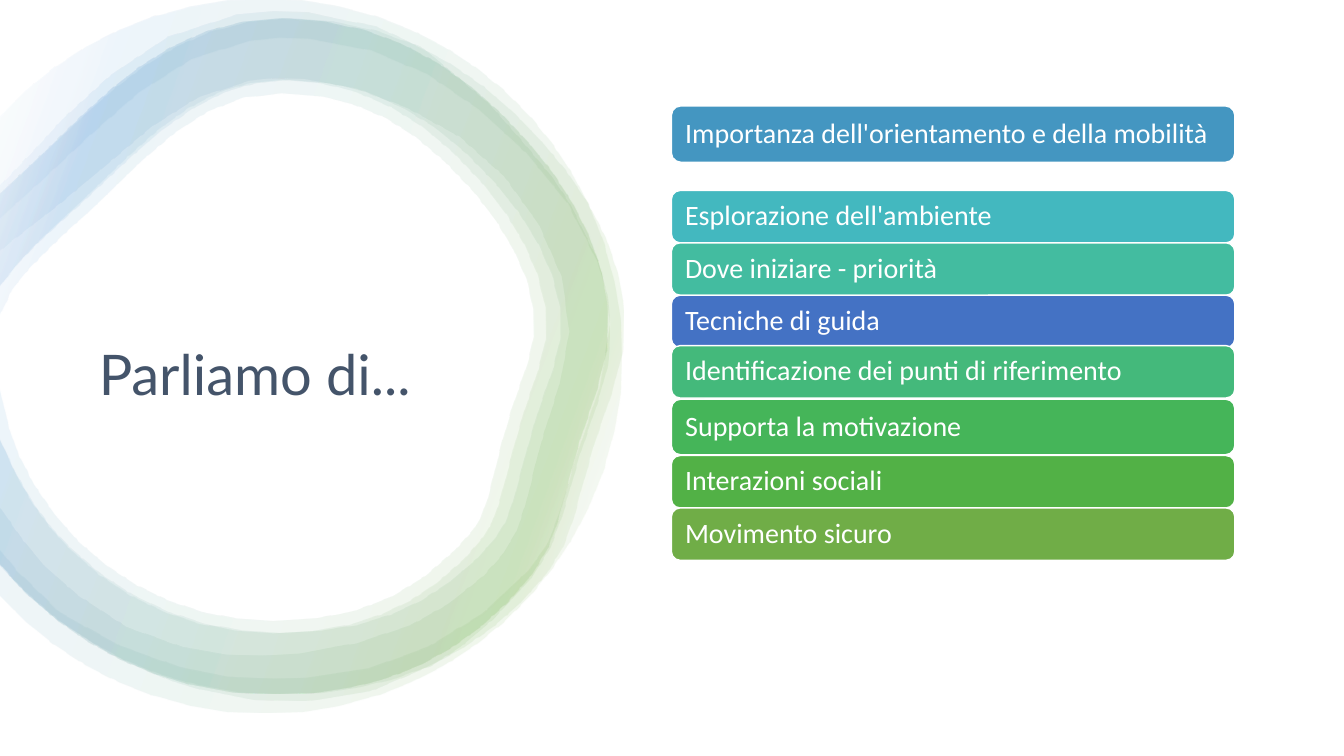
import math
from lxml import etree
from pptx import Presentation
from pptx.dml.color import RGBColor
from pptx.enum.shapes import MSO_SHAPE
from pptx.enum.text import MSO_ANCHOR, PP_ALIGN
from pptx.oxml.ns import qn
from pptx.util import Cm, Pt

ROUND = MSO_SHAPE.ROUNDED_RECTANGLE
MIDDLE = MSO_ANCHOR.MIDDLE
LEFT = PP_ALIGN.LEFT

TITLE = "Parliamo di..."
TOPICS = [
    ("Importanza dell'orientamento e della mobilità", 2.67, 1.42, "4496C1"),
    ("Esplorazione dell'ambiente", 4.8, 1.32, "43B8BF"),
    ("Dove iniziare - priorità", 6.12, 1.32, "43BCA0"),
    ("Tecniche di guida", 7.44, 1.32, "4472C4"),
    ("Identificazione dei punti di riferimento", 8.71, 1.32, "44B97B"),
    ("Supporta la motivazione", 10.06, 1.4, "45B559"),
    ("Interazioni sociali", 11.48, 1.32, "52B146"),
    ("Movimento sicuro", 12.8, 1.32, "70AD47"),
]
CARD = {"left": 16.92, "width": 14.2}
TITLE_BOX = (2.24, 5.61, 10.16, 7.82)
TITLE_FONT = {"name": "Lato", "size": Pt(40)}
CARD_FONT = {"name": "Calibri", "size": Pt(20)}
FRAME = {"word_wrap": True, "vertical_anchor": MIDDLE}
CARD_PAD = {"margin_left": Cm(0.28), "margin_right": Cm(0.28),
            "margin_top": Cm(0.2), "margin_bottom": Cm(0.2)}

STOPS = [(2, "FFFFFF"), (16, "70AD47"), (85, "5B9BD5"), (100, "FFFFFF")]
OPACITY = 10
ANGLE = 160
CHORD = 0.4
STRETCH = 1.025

RIM = [
    (0, 1.92), (0.24, 1.69), (0.4, 1.55), (0.56, 1.39), (1.19, 0.76),
    (1.83, 0.18), (2.79, 0.18), (3.84, 0.18), (4.62, 0.69), (5.25, 1.42),
    (5.79, 2.03), (6.26, 2.93), (5.92, 3.86), (5.46, 5.1), (5.66, 5.34),
    (5.03, 5.97), (4.4, 6.6), (3.68, 6.88), (2.71, 6.88), (1.76, 6.88),
    (0.9, 6.5), (0.27, 5.88), (0.19, 5.8), (0.11, 5.72), (0, 5.58),
]
WIDE = [
    (0, 3.83), (0.06, 4.13), (0.11, 4.31), (0.18, 4.48), (0.32, 4.81),
    (0.53, 5.1), (0.78, 5.36), (1.3, 5.87), (1.99, 6.15), (2.71, 6.15),
    (3.48, 6.15), (4.02, 5.94), (4.51, 5.45), (4.68, 5.28), (4.74, 5.19),
    (4.77, 5.12), (4.82, 5.02), (4.85, 4.88), (4.9, 4.69), (4.96, 4.43),
    (5.05, 4.08), (5.23, 3.6), (5.33, 3.34), (5.32, 3.06), (5.22, 2.76),
    (5.12, 2.48), (4.94, 2.18), (4.7, 1.9), (4.41, 1.57), (4.13, 1.33),
    (3.83, 1.17), (3.51, 1), (3.17, 0.92), (2.79, 0.92), (2.12, 0.92),
    (1.66, 1.33), (1.08, 1.91), (0.95, 2.04), (0.82, 2.16), (0.69, 2.27),
    (0.46, 2.49), (0.26, 2.67), (0.13, 2.86), (0.07, 2.95), (0.03, 3.03),
    (0, 3.13),
]
SLIM = [
    (0, 4.34), (0.22, 4.87), (0.43, 5.18), (0.7, 5.44), (1.24, 5.98),
    (1.95, 6.27), (2.71, 6.27), (3.12, 6.27), (3.47, 6.21), (3.77, 6.09),
    (4.07, 5.98), (4.34, 5.79), (4.6, 5.54), (4.78, 5.36), (4.84, 5.25),
    (4.88, 5.17), (4.93, 5.06), (4.97, 4.92), (5.02, 4.72), (5.08, 4.47),
    (5.17, 4.12), (5.34, 3.65), (5.45, 3.36), (5.45, 3.05), (5.33, 2.72),
    (5.23, 2.43), (5.05, 2.12), (4.79, 1.82), (4.5, 1.48), (4.2, 1.23),
    (3.88, 1.06), (3.54, 0.88), (3.19, 0.79), (2.79, 0.79), (2.47, 0.79),
    (2.17, 0.88), (1.87, 1.07), (1.56, 1.26), (1.27, 1.55), (0.99, 1.82),
    (0.86, 1.95), (0.73, 2.07), (0.61, 2.18), (0.37, 2.4), (0.17, 2.59),
    (0, 2.84),
]
WAVE = [
    (0, 1.84), (0.4, 1.42), (0.61, 1.19), (1.09, 0.75), (1.66, 0.37),
    (2.34, 0.15), (2.7, 0.12), (3.05, 0.13), (3.73, 0.27), (4.2, 0.49),
    (4.84, 1.03), (5.16, 1.39), (5.47, 1.76), (5.65, 2.03), (5.94, 2.62),
    (6.02, 2.95), (6.05, 3.29), (6.02, 3.63), (5.93, 3.96), (5.74, 4.52),
    (5.57, 5.11), (5.45, 5.43), (5.27, 5.72), (4.88, 6.14), (4.56, 6.41),
    (4.28, 6.59), (3.66, 6.85), (3, 6.95), (2.51, 6.93), (2.02, 6.84),
    (1.7, 6.75), (1.11, 6.49), (0.56, 6.14), (0.25, 5.88), (0, 5.61),
    (0, 5.03), (0.2, 5.32), (0.43, 5.6), (0.76, 5.89), (1.25, 6.21),
    (1.81, 6.41), (2.24, 6.48), (2.6, 6.49), (2.97, 6.47), (3.53, 6.37),
    (4.07, 6.19), (4.44, 5.98), (4.78, 5.71), (4.97, 5.5), (5.11, 5.27),
    (5.2, 5.01), (5.35, 4.41), (5.54, 3.81), (5.64, 3.29), (5.56, 2.74),
    (5.33, 2.22), (4.99, 1.75), (4.55, 1.36), (4.04, 1.08), (3.53, 0.88),
    (2.99, 0.79), (2.72, 0.78), (2.46, 0.81), (1.96, 0.97), (1.5, 1.26),
    (1.05, 1.64), (0.57, 2.04), (0.09, 2.41), (0, 2.49),
]
DISC = (2.63, 3.53, 3.54)
HOLE = [
    (0, 5.44), (0.17, 5.65), (0.6, 6.07), (1.2, 6.4), (1.79, 6.61),
    (2.26, 6.7), (2.73, 6.72), (3.04, 6.71), (3.66, 6.62), (4.24, 6.41),
    (4.78, 6.08), (5.24, 5.65), (5.42, 5.4), (5.54, 5.1), (5.73, 4.47),
    (5.94, 3.85), (6.05, 3.22), (6.01, 2.9), (5.92, 2.59), (5.63, 2.02),
    (5.22, 1.52), (4.75, 1.09), (4.24, 0.74), (3.67, 0.5), (3.07, 0.39),
    (2.77, 0.38), (2.47, 0.41), (1.9, 0.59), (1.38, 0.92), (0.9, 1.34),
    (0.42, 1.79), (0, 2.17),
]


def tint(code):
    return RGBColor.from_string(code)


def apply(target, values):
    for key, value in values.items():
        setattr(target, key, value)


def curve(nodes):
    points = [nodes[0]]
    for i in range(0, len(nodes) - 1, 3):
        quad = nodes[i:i + 4]
        count = math.ceil(math.dist(quad[0], quad[3]) / CHORD)
        for step in range(1, count + 1):
            t = step / count
            u = 1 - t
            mix = (u ** 3, 3 * u * u * t, 3 * u * t * t, t ** 3)
            points.append(tuple(sum(m * v for m, v in zip(mix, axis)) for axis in zip(*quad)))
    return points


def arc(x, y, radius):
    turns = [math.radians(a) for a in range(-138, 139, 6)]
    return [(max(0, x + radius * math.cos(a)), y + radius * math.sin(a)) for a in turns]


def add_ring(shapes, points):
    dots = [(x * 1000, y * 1000) for x, y in points]
    pen = shapes.build_freeform(*dots[0], scale=Cm(2.54) / 1000)
    pen.add_line_segments(dots[1:], close=True)
    ring = pen.convert_to_shape()
    ring.shadow.inherit = False
    ring.line.fill.background()
    ring.fill.gradient()
    ring.fill.gradient_angle = ANGLE
    stops = ring.element.spPr.find(qn("a:gradFill")).find(qn("a:gsLst"))
    for old in list(stops):
        stops.remove(old)
    for place, code in STOPS:
        stop = etree.SubElement(stops, qn("a:gs"), pos=str(place * 1000))
        color = etree.SubElement(stop, qn("a:srgbClr"), val=code)
        etree.SubElement(color, qn("a:alpha"), val=str(OPACITY * 1000))


def write(shape, text, font, code):
    apply(shape.text_frame, FRAME)
    para = shape.text_frame.paragraphs[0]
    apply(para, {"text": text, "alignment": LEFT, "line_spacing": 0.9})
    apply(para.font, font)
    para.font.color.rgb = tint(code)


def main():
    deck = Presentation()
    apply(deck, {"slide_width": Cm(33.87), "slide_height": Cm(19.05)})
    shapes = deck.slides.add_slide(deck.slide_layouts[6]).shapes

    rim = curve(RIM)
    slim = rim + curve(SLIM)
    rings = [
        WAVE,
        [(x * STRETCH, y) for x, y in slim],
        rim + curve(WIDE),
        slim,
        arc(*DISC) + HOLE,
    ]
    for points in rings:
        add_ring(shapes, points)

    title = shapes.add_textbox(*map(Cm, TITLE_BOX))
    write(title, TITLE, TITLE_FONT, "44546A")

    for text, top, height, code in TOPICS:
        card = shapes.add_shape(ROUND, Cm(CARD["left"]), Cm(top), Cm(CARD["width"]), Cm(height))
        card.shadow.inherit = False
        card.fill.solid()
        card.fill.fore_color.rgb = tint(code)
        card.line.color.rgb = tint("FFFFFF")
        card.line.width = Pt(1)
        apply(card.text_frame, CARD_PAD)
        write(card, text, CARD_FONT, "FFFFFF")

    deck.save("out.pptx")


if __name__ == "__main__":
    main()
